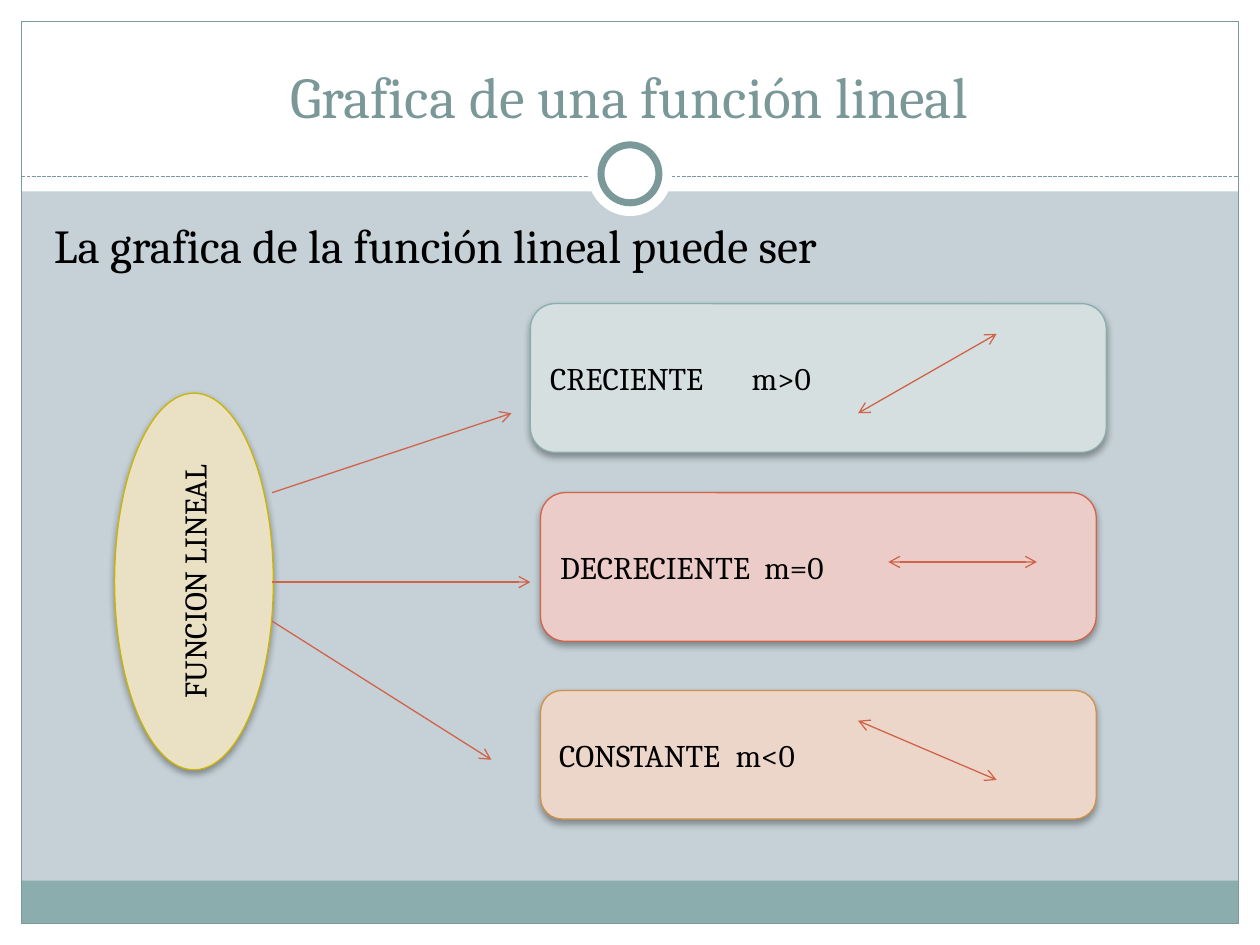
import pptx
import pptx.util
import pptx.dml.color
import pptx.enum.dml
import pptx.enum.shapes
import pptx.enum.text
import pptx.oxml
import pptx.oxml.ns

Inches = pptx.util.Inches
Pt = pptx.util.Pt
RGBColor = pptx.dml.color.RGBColor
MSO_SHAPE = pptx.enum.shapes.MSO_SHAPE
PP_ALIGN = pptx.enum.text.PP_ALIGN
MSO_ANCHOR = pptx.enum.text.MSO_ANCHOR
qn = pptx.oxml.ns.qn
NS = pptx.oxml.ns.nsdecls("a")

W, H = 10, 7.5
EDGE = 0.17
INNER = W - 2 * EDGE
FONT = "Cambria"
BLACK = RGBColor(0, 0, 0)
WHITE = RGBColor(0xFF, 0xFF, 0xFF)
BACKGROUND = RGBColor(0xC5, 0xD1, 0xD7)
FRAME = RGBColor(0x7C, 0x99, 0x9A)
TITLE = RGBColor(0x7B, 0x98, 0x99)
TEAL = RGBColor(0x8C, 0xAD, 0xAE)
RED = RGBColor(0xD1, 0x63, 0x49)
OCHRE = RGBColor(0xD1, 0x90, 0x49)
GOLD = RGBColor(0xCC, 0xB4, 0x00)
PALE_TEAL = RGBColor(0xD5, 0xDF, 0xDF)
PALE_RED = RGBColor(0xEC, 0xCC, 0xC9)
PALE_OCHRE = RGBColor(0xEC, 0xD6, 0xC9)
PALE_GOLD = RGBColor(0xEA, 0xE1, 0xC5)

SHADOW = (
    f'<a:effectLst {NS}><a:outerShdw blurRad="50800" dist="25400" dir="5400000" rotWithShape="0">'
    '<a:srgbClr val="000000"><a:alpha val="35000"/></a:srgbClr></a:outerShdw></a:effectLst>'
)


def add_box(slide, kind, at, fill=None, line=None, width=0.75):
    sp = slide.shapes.add_shape(kind, *map(Inches, at))
    sp.shadow.inherit = False
    if fill is None:
        sp.fill.background()
    else:
        sp.fill.solid()
        sp.fill.fore_color.rgb = fill
    if line is None:
        sp.line.fill.background()
    else:
        sp.line.color.rgb = line
        sp.line.width = Pt(width)
    return sp


def set_text(sp, text, size, color=BLACK, align=PP_ALIGN.LEFT, anchor=MSO_ANCHOR.MIDDLE):
    tf = sp.text_frame
    tf.word_wrap = True
    tf.vertical_anchor = anchor
    p = tf.paragraphs[0]
    p.text = text
    p.alignment = align
    for r in p.runs:
        r.font.name = FONT
        r.font.size = Pt(size)
        r.font.color.rgb = color
    return p


def add_text(slide, at, *style):
    return set_text(slide.shapes.add_textbox(*map(Inches, at)), *style)


def add_node(slide, kind, at, fill, line, text, align=PP_ALIGN.LEFT):
    sp = add_box(slide, kind, at, fill, line)
    pr = sp._element.spPr
    pr.replace(pr.find(qn("a:effectLst")), pptx.oxml.parse_xml(SHADOW))
    set_text(sp, text, 18, BLACK, align)
    return sp


def add_case(slide, at, fill, line, text, tab):
    sp = add_node(slide, MSO_SHAPE.ROUNDED_RECTANGLE, at, fill, line, text)
    tabs = f'<a:tabLst {NS}><a:tab pos="{Inches(tab)}" algn="l"/></a:tabLst>'
    sp.text_frame.paragraphs[0]._p.get_or_add_pPr().append(pptx.oxml.parse_xml(tabs))


def add_line(slide, start, end, color, ends=()):
    cx = slide.shapes.add_connector(
        pptx.enum.shapes.MSO_CONNECTOR.STRAIGHT, *map(Inches, start + end))
    cx.line.color.rgb = color
    cx.line.width = Pt(0.75)
    ln = cx.line._get_or_add_ln()
    for end_name in ends:
        ln.append(pptx.oxml.parse_xml(f'<a:{end_name} {NS} type="arrow"/>'))
    cx._element.spPr.append(pptx.oxml.parse_xml(f"<a:effectLst {NS}/>"))
    return cx


def add_circle(slide, center, size, *style):
    x, y = center
    add_box(slide, MSO_SHAPE.OVAL, (x - size / 2, y - size / 2, size, size), *style)


def add_frame(slide):
    slide.background.fill.solid()
    slide.background.fill.fore_color.rgb = BACKGROUND
    for at in ((0, H - EDGE, W, EDGE), (0, 0, W, 1.52),
               (0, 0, EDGE, H), (W - EDGE, 0, EDGE, H)):
        add_box(slide, MSO_SHAPE.RECTANGLE, at, WHITE)
    add_box(slide, MSO_SHAPE.RECTANGLE, (EDGE, 6.99, INNER, 0.34), TEAL)
    add_box(slide, MSO_SHAPE.RECTANGLE, (EDGE, EDGE, INNER, H - 2 * EDGE), None, FRAME)
    rule = add_line(slide, (EDGE, 1.4), (W - EDGE, 1.4), FRAME)
    rule.line.dash_style = pptx.enum.dml.MSO_LINE.SQUARE_DOT
    center = (W / 2, 1.38)
    add_circle(slide, center, 0.67, WHITE)
    add_circle(slide, center, 0.46, WHITE, FRAME, 4)


def add_diagram(slide):
    root = add_node(slide, MSO_SHAPE.OVAL, (0.91, 3.12, 1.26, 2.99),
                    PALE_GOLD, GOLD, "FUNCION LINEAL", PP_ALIGN.CENTER)
    root.text_frame._txBody.bodyPr.set("vert", "vert270")
    for y, end in ((3.91, (4.06, 3.28)), (4.62, (4.21, 4.62)), (4.93, (3.9, 6.03))):
        add_line(slide, (2.16, y), end, RED, ("tailEnd",))
    cases = (
        ((4.21, 2.41, 4.57, 1.18), PALE_TEAL, TEAL, "CRECIENTE\tm>0", 1.6),
        ((4.29, 3.91, 4.41, 1.18), PALE_RED, RED, "DECRECIENTE\tm=0", 1.62),
        ((4.29, 5.48, 4.41, 1.02), PALE_OCHRE, OCHRE, "CONSTANTE\tm<0", 1.4),
    )
    for case in cases:
        add_case(slide, *case)
    for start, end in (((6.81, 3.28), (7.91, 2.65)),
                       ((7.05, 4.46), (8.23, 4.46)),
                       ((6.81, 5.72), (7.91, 6.19))):
        add_line(slide, start, end, RED, ("headEnd", "tailEnd"))


def main():
    prs = pptx.Presentation()
    prs.slide_width, prs.slide_height = Inches(W), Inches(H)
    slide = prs.slides.add_slide(prs.slide_layouts[6])
    add_frame(slide)
    add_text(slide, (0.33, 0.25, 9.33, 0.83), "Grafica de una función lineal",
             33, TITLE, PP_ALIGN.CENTER, MSO_ANCHOR.BOTTOM)
    add_text(slide, (0.33, 1.67, 9.3, 5), "La grafica de la función lineal puede ser",
             27, BLACK, PP_ALIGN.LEFT, MSO_ANCHOR.TOP)
    add_diagram(slide)
    prs.save("out.pptx")


if __name__ == "__main__":
    main()
